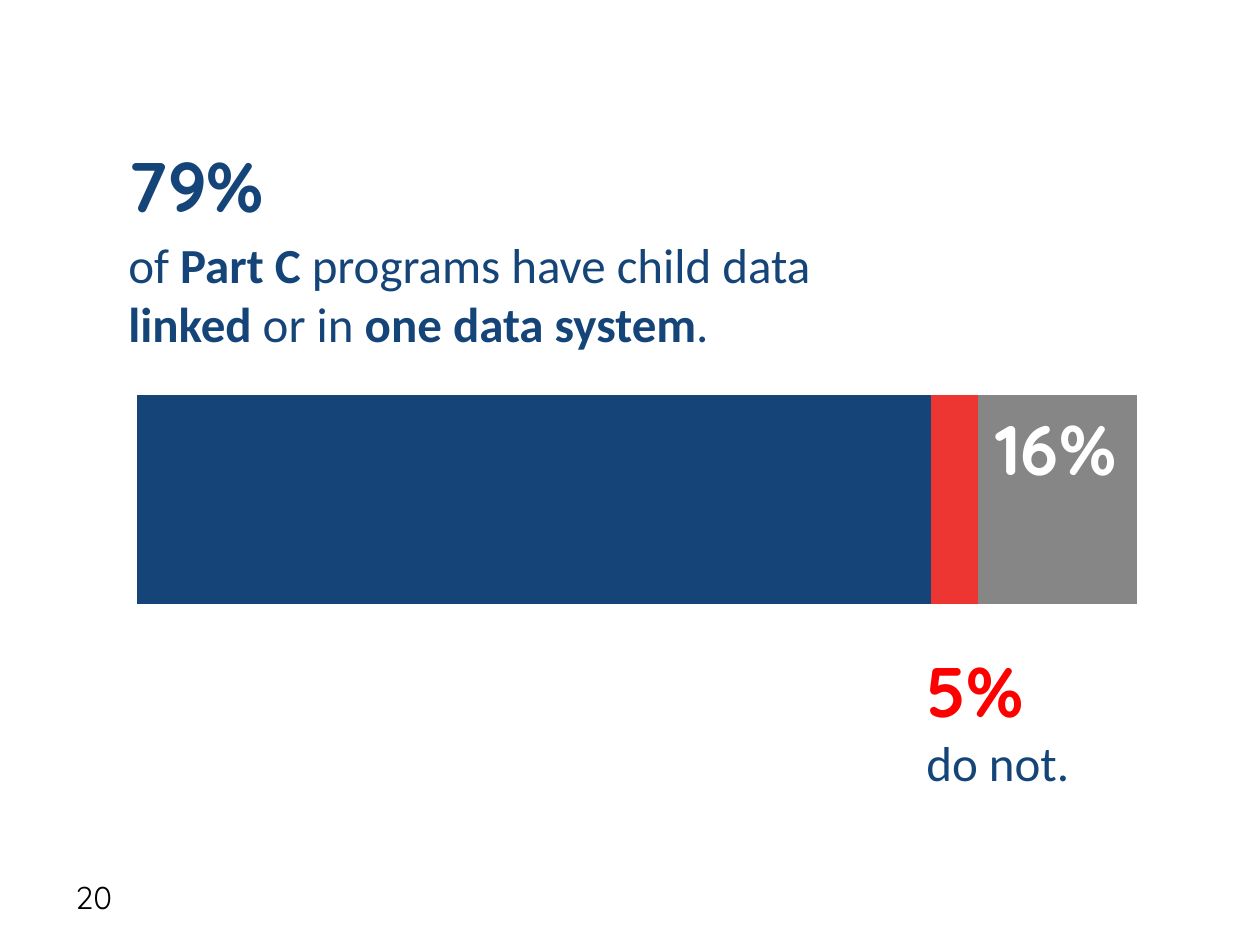
import pptx
import pptx.chart.data
import pptx.dml.color
import pptx.enum.chart
import pptx.enum.text
import pptx.oxml
import pptx.oxml.ns
import pptx.util

PX = 914400 / 126
NAVY = pptx.dml.color.RGBColor(0x15, 0x45, 0x78)
RED = pptx.dml.color.RGBColor(0xED, 0x35, 0x32)
BRIGHT_RED = pptx.dml.color.RGBColor(0xFF, 0x00, 0x00)
GRAY = pptx.dml.color.RGBColor(0x86, 0x86, 0x87)
WHITE = pptx.dml.color.RGBColor(0xFF, 0xFF, 0xFF)
BLACK = pptx.dml.color.RGBColor(0x00, 0x00, 0x00)
HEADING_FONT = "Quicksand"
BODY_FONT = "Calibri"


def px(*lengths):
    return [pptx.util.Emu(round(length * PX)) for length in lengths]


def add_text(page, bounds, spans, font_name, size, color,
             anchor=pptx.enum.text.MSO_ANCHOR.TOP):
    box = page.shapes.add_textbox(*px(*bounds))
    frame = box.text_frame
    frame.word_wrap = True
    frame.vertical_anchor = anchor
    para = frame.paragraphs[0]
    for words, bold in spans:
        span = para.add_run()
        span.text = words
        span.font.name = font_name
        span.font.size = pptx.util.Pt(size)
        span.font.bold = bold
        span.font.color.rgb = color


def add_percentage(page, bounds, words, color):
    add_text(page, bounds, [(words, True)], HEADING_FONT, 40, color)


def set_plot_layout(chart, left, top, width, height):
    plot_area = chart.plots[0]._element.getparent()
    for layout in plot_area.findall(pptx.oxml.ns.qn("c:layout")):
        plot_area.remove(layout)
    sizes = "".join(
        f'<c:{tag} val="{value}"/>'
        for tag, value in (("x", left), ("y", top), ("w", width), ("h", height))
    )
    plot_area.insert(0, pptx.oxml.parse_xml(
        f'<c:layout {pptx.oxml.ns.nsdecls("c")}><c:manualLayout>'
        '<c:layoutTarget val="inner"/><c:xMode val="edge"/><c:yMode val="edge"/>'
        f'{sizes}</c:manualLayout></c:layout>'
    ))


def add_share_bar(page, bounds, shares):
    data = pptx.chart.data.CategoryChartData()
    data.categories = ["1"]
    for number, (value, color) in enumerate(shares, start=1):
        data.add_series(f"Series {number}", [value])
    chart = page.shapes.add_chart(
        pptx.enum.chart.XL_CHART_TYPE.BAR_STACKED, *px(*bounds), data
    ).chart
    chart.has_legend = False
    chart.has_title = False
    chart.font.name = BODY_FONT
    chart.font.size = pptx.util.Pt(18)
    chart.font.color.rgb = BLACK
    scale = chart.value_axis
    scale.minimum_scale = 0
    scale.maximum_scale = 127
    scale.major_unit = 25
    scale.tick_labels.number_format = "0%"
    scale.tick_labels.number_format_is_linked = False
    for axis in (scale, chart.category_axis):
        axis.has_major_gridlines = False
        axis.visible = False
    plot = chart.plots[0]
    plot.vary_by_categories = False
    plot.gap_width = 150
    plot.overlap = 100
    for series, (value, color) in zip(plot.series, shares):
        series.format.fill.solid()
        series.format.fill.fore_color.rgb = color
    set_plot_layout(chart, 0.02, 0.02, 0.96, 0.93)


def main():
    deck = pptx.Presentation()
    deck.slide_width, deck.slide_height = px(1260, 945)
    page = deck.slides.add_slide(deck.slide_layouts[6])

    add_text(page, (63, 872, 294, 50), [("20", False)], HEADING_FONT, 18, BLACK,
             pptx.enum.text.MSO_ANCHOR.MIDDLE)
    add_share_bar(page, (116, 228, 1050, 560), [(100, NAVY), (6, RED), (20, GRAY)])
    add_percentage(page, (116, 136, 609, 97), "79%", NAVY)
    add_text(page, (116, 228, 714, 131), [
        ("of ", False),
        ("Part C ", True),
        ("programs have child data ", False),
        ("linked", True),
        (" or in ", False),
        ("one data system", True),
        (".", False),
    ], BODY_FONT, 28, NAVY)
    add_percentage(page, (914, 641, 609, 97), "5%", BRIGHT_RED)
    add_text(page, (914, 726, 559, 72), [("do not.", False)], BODY_FONT, 28, NAVY)
    add_percentage(page, (983, 399, 168, 97), "16%", WHITE)

    deck.save("out.pptx")


if __name__ == "__main__":
    main()
